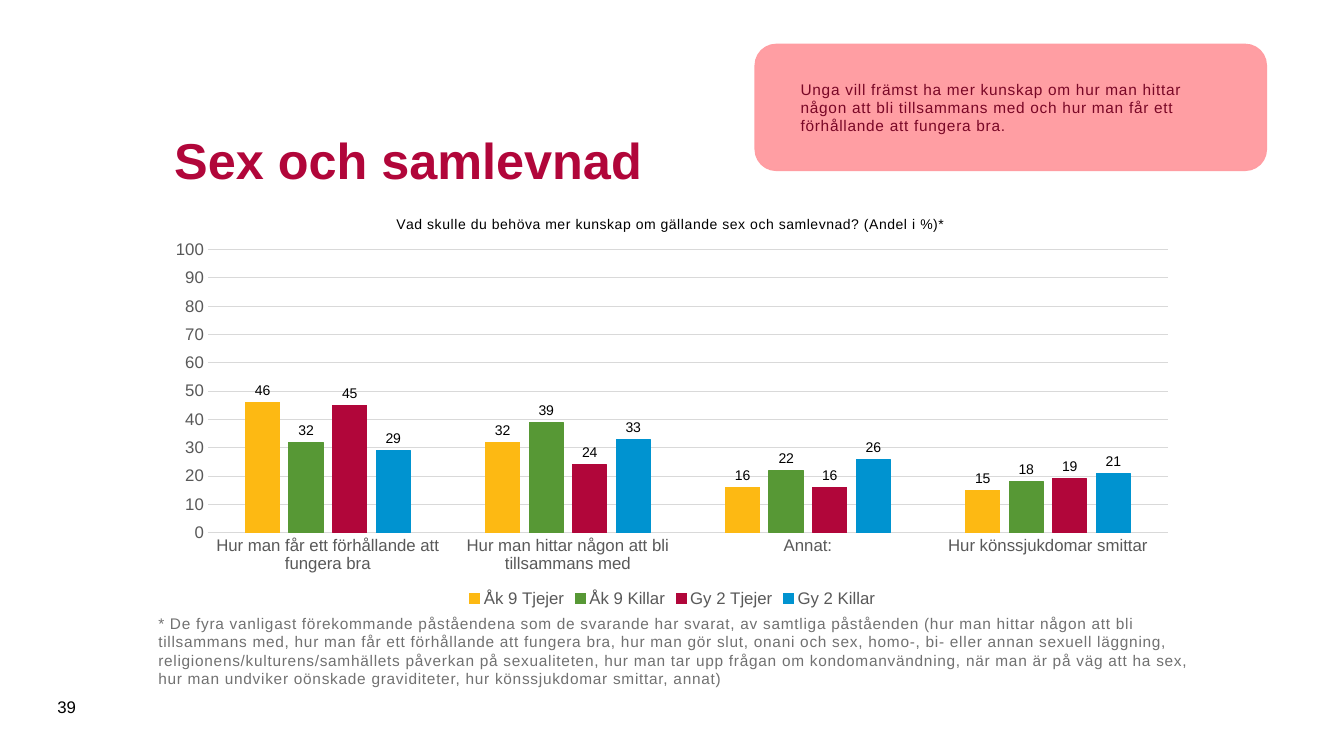
import lxml.etree
import pptx
import pptx.chart.data
import pptx.dml.color
import pptx.enum.chart
import pptx.enum.shapes
import pptx.enum.text
import pptx.oxml
import pptx.oxml.ns
import pptx.util

Inches = pptx.util.Inches
Pt = pptx.util.Pt
RGBColor = pptx.dml.color.RGBColor
MIDDLE = pptx.enum.text.MSO_ANCHOR.MIDDLE
TOP = pptx.enum.text.MSO_ANCHOR.TOP
qn = pptx.oxml.ns.qn

FONT = "Arial"
CRIMSON = RGBColor(0xB1, 0x06, 0x3A)
PINK = RGBColor(0xFF, 0x9D, 0xA2)
WINE = RGBColor(0x79, 0x07, 0x26)
BLACK = RGBColor(0x00, 0x00, 0x00)
NOTE_GREY = RGBColor(0x71, 0x71, 0x71)
AXIS_GREY = RGBColor(0x59, 0x59, 0x59)
GRID_GREY = RGBColor(0xD9, 0xD9, 0xD9)
YELLOW = RGBColor(0xFD, 0xB9, 0x13)
GREEN = RGBColor(0x57, 0x98, 0x35)
BLUE = RGBColor(0x00, 0x93, 0xD0)

HEADING = "Sex och samlevnad"
FINDING = ("Unga vill främst ha mer kunskap om hur man hittar någon att bli "
           "tillsammans med och hur man får ett förhållande att fungera bra.")
QUESTION = ("Vad skulle du behöva mer kunskap om gällande sex och samlevnad? "
            "(Andel i %)*")
FOOTNOTE = (
    "* De fyra vanligast förekommande påståendena som de svarande har svarat, "
    "av samtliga påståenden (hur man hittar någon att bli tillsammans med, "
    "hur man får ett förhållande att fungera bra, hur man gör slut, onani och "
    "sex, homo-, bi- eller annan sexuell läggning, "
    "religionens/kulturens/samhällets påverkan på sexualiteten, hur man tar "
    "upp frågan om kondomanvändning, när man är på väg att ha sex, hur man "
    "undviker oönskade graviditeter, hur könssjukdomar smittar, annat)")
TOPICS = ["Hur man får ett förhållande att fungera bra",
          "Hur man hittar någon att bli tillsammans med",
          "Annat:", "Hur könssjukdomar smittar"]
GROUPS = [("Åk 9 Tjejer", YELLOW, (46, 32, 16, 15)),
          ("Åk 9 Killar", GREEN, (32, 39, 22, 18)),
          ("Gy 2 Tjejer", CRIMSON, (45, 24, 16, 19)),
          ("Gy 2 Killar", BLUE, (29, 33, 26, 21))]
NUMBER_FORMAT = "#,##0;#,##0"


def style_font(font, size, color, bold=False):
    """Give a font the slide's typeface, a size and a colour."""
    font.name = FONT
    font.size = Pt(size)
    font.bold = bold
    font.color.rgb = color


def style_line(line, color, width=0.75):
    """Draw a line in one colour."""
    line.color.rgb = color
    line.width = Pt(width)


def fill_frame(frame, wording, size, color, bold=False, spacing=0,
               anchor=MIDDLE, insets=(0.1, 0.05)):
    """Write one left-aligned paragraph into a text frame."""
    frame.word_wrap = True
    frame.vertical_anchor = anchor
    frame.margin_left = frame.margin_right = Inches(insets[0])
    frame.margin_top = frame.margin_bottom = Inches(insets[1])
    frame.text = wording
    paragraph = frame.paragraphs[0]
    paragraph.alignment = pptx.enum.text.PP_ALIGN.LEFT
    run = paragraph.runs[0]
    style_font(run.font, size, color, bold)
    run.font._element.set("spc", str(spacing))


def add_text(slide, box, *wording, **styling):
    """Place a text box on the slide."""
    textbox = slide.shapes.add_textbox(*map(Inches, box))
    fill_frame(textbox.text_frame, *wording, **styling)


def add_finding(slide, box):
    """Place the rounded callout with the main finding."""
    callout = slide.shapes.add_shape(
        pptx.enum.shapes.MSO_SHAPE.ROUNDED_RECTANGLE, *map(Inches, box))
    callout.shadow.inherit = False
    callout.fill.solid()
    callout.fill.fore_color.rgb = PINK
    tint = callout._element.spPr.find(qn("a:solidFill"))[0]
    lxml.etree.SubElement(tint, qn("a:alpha")).set("val", "98000")
    style_line(callout.line, PINK, 1)
    fill_frame(callout.text_frame, FINDING, 11, WINE, spacing=50,
               insets=(0.39, 0.2))


def manual_layout(**settings):
    """Build a chart layout element from its settings."""
    layout = pptx.oxml.parse_xml(
        f'<c:layout {pptx.oxml.ns.nsdecls("c")}><c:manualLayout/></c:layout>')
    for name, value in settings.items():
        lxml.etree.SubElement(layout[0], qn(f"c:{name}")).set("val", str(value))
    return layout


def drop_layout(element):
    """Remove any layout the chart part already has."""
    for layout in element.findall(qn("c:layout")):
        element.remove(layout)


def style_axes(chart):
    """Format both axes and the gridlines."""
    for axis in (chart.category_axis, chart.value_axis):
        axis.major_tick_mark = pptx.enum.chart.XL_TICK_MARK.NONE
        axis.minor_tick_mark = pptx.enum.chart.XL_TICK_MARK.NONE
        style_font(axis.tick_labels.font, 12, AXIS_GREY)
    style_line(chart.category_axis.format.line, GRID_GREY)
    scale = chart.value_axis
    scale.minimum_scale, scale.maximum_scale, scale.major_unit = 0, 100, 10
    scale.tick_labels.number_format = NUMBER_FORMAT
    scale.tick_labels.number_format_is_linked = False
    scale.format.line.fill.background()
    style_line(scale.major_gridlines.format.line, GRID_GREY)


def style_bars(plot):
    """Colour and label the bars of each group."""
    plot.gap_width, plot.overlap = 219, -27
    plot.vary_by_categories = False
    for series, (_, color, _) in zip(plot.series, GROUPS):
        series.format.fill.solid()
        series.format.fill.fore_color.rgb = color
        style_line(series.format.line, color)
        labels = series.data_labels
        labels.show_value = True
        labels.position = pptx.enum.chart.XL_LABEL_POSITION.OUTSIDE_END
        labels.number_format = NUMBER_FORMAT
        labels.number_format_is_linked = False
        style_font(labels.font, 10, BLACK)


def add_knowledge_chart(slide, box):
    """Place the clustered columns with question, axes and legend."""
    answers = pptx.chart.data.CategoryChartData()
    answers.categories = TOPICS
    for name, _, shares in GROUPS:
        answers.add_series(name, shares)
    chart = slide.shapes.add_chart(
        pptx.enum.chart.XL_CHART_TYPE.COLUMN_CLUSTERED,
        *map(Inches, box), answers).chart
    style_font(chart.font, 10, BLACK)
    chart.has_title = True
    question = chart.chart_title.text_frame
    question.text = QUESTION
    run = question.paragraphs[0].runs[0]
    style_font(run.font, 10, BLACK)
    run.font._element.set("spc", "50")
    title = chart.chart_title._element
    drop_layout(title)
    title.find(qn("c:tx")).addnext(
        manual_layout(xMode="edge", yMode="edge", x=0.23, y=0.04))
    plot_area = chart._chartSpace.chart.plotArea
    drop_layout(plot_area)
    plot_area.insert(0, manual_layout(
        layoutTarget="inner", xMode="edge", yMode="edge",
        x=0.05, y=0.13, w=0.93, h=0.68))
    style_axes(chart)
    style_bars(chart.plots[0])
    chart.has_legend = True
    chart.legend.position = pptx.enum.chart.XL_LEGEND_POSITION.BOTTOM
    chart.legend.include_in_layout = False
    style_font(chart.legend.font, 12, AXIS_GREY)


def main():
    """Build and save the slide."""
    deck = pptx.Presentation()
    deck.slide_width, deck.slide_height = Inches(13.33), Inches(7.5)
    slide = deck.slides.add_slide(deck.slide_layouts[6])
    add_text(slide, (1.63, 0.87, 10.24, 1.42), HEADING, 36, CRIMSON, bold=True)
    add_finding(slide, (7.49, 0.44, 5.07, 1.25))
    add_text(slide, (0.47, 6.81, 0.57, 0.4), "39", 12, BLACK)
    add_knowledge_chart(slide, (1.55, 1.94, 10.24, 4.13))
    add_text(slide, (1.57, 6.09, 10.24, 0.94), FOOTNOTE, 11, NOTE_GREY,
             spacing=50, anchor=TOP, insets=(0, 0))
    deck.save("out.pptx")


if __name__ == "__main__":
    main()
